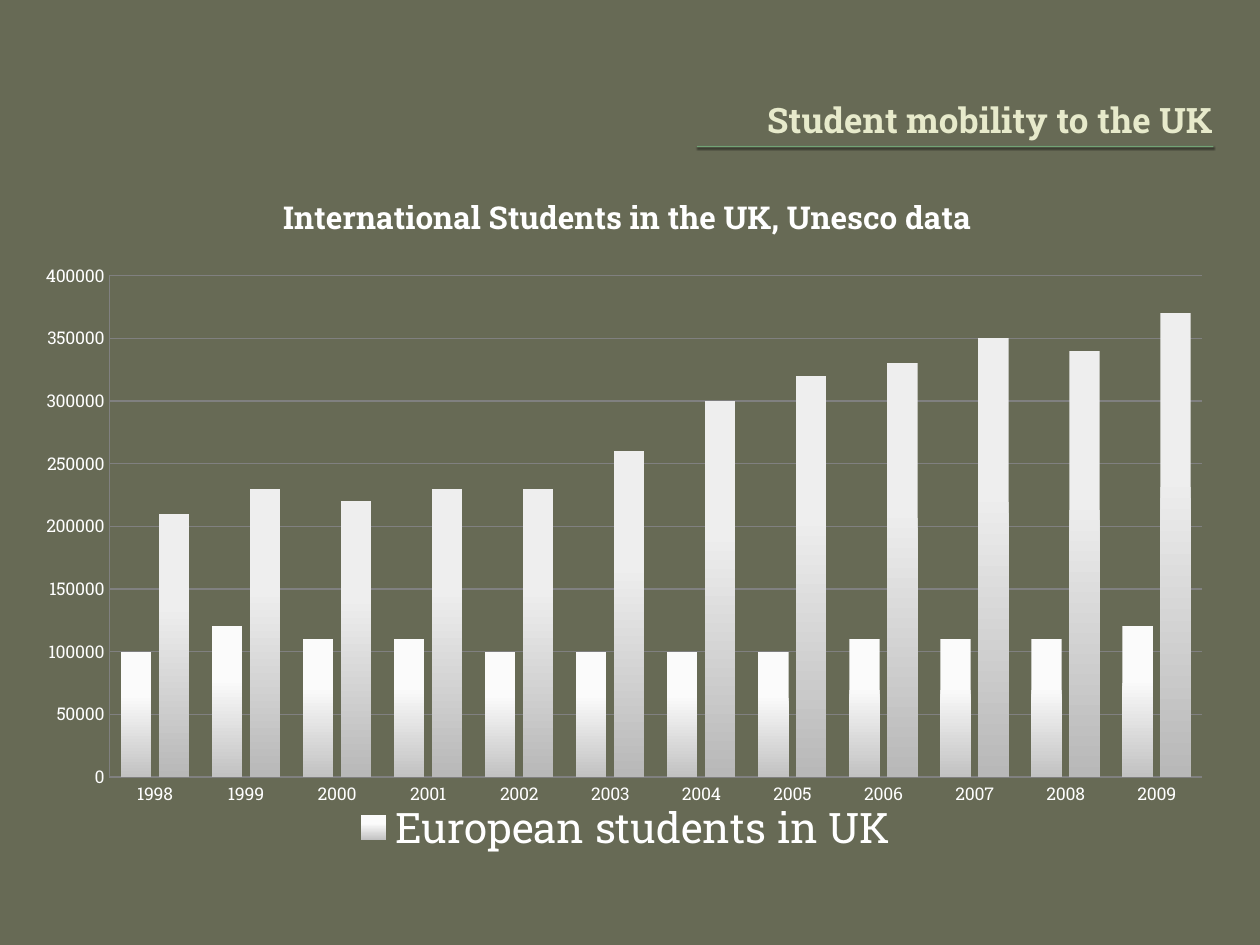
import lxml.etree
import pptx
import pptx.chart.data
import pptx.dml.color
import pptx.enum.chart
import pptx.enum.shapes
import pptx.enum.text
import pptx.oxml
import pptx.oxml.ns
import pptx.util
from dataclasses import dataclass

Cm = pptx.util.Cm
Pt = pptx.util.Pt
qn = pptx.oxml.ns.qn


@dataclass(frozen=True)
class Theme:
    font: str = "Roboto Slab"
    background: str = "676A55"
    heading: str = "E7EACB"
    rule: str = "72A376"
    text: str = "FFFFFF"
    grid: str = "808080"
    european: tuple = ("FBFBFB", "C2C2C2")
    international: tuple = ("EEEEEE", "B8B8B8")
    heading_size: int = 20
    chart_title_size: int = 18
    axis_size: int = 10
    legend_size: int = 24


theme = Theme()


def format_font(font, size, color, bold=False):
    values = {"name": theme.font, "size": Pt(size), "bold": bold}
    for name, value in values.items():
        setattr(font, name, value)
    font.color.rgb = pptx.dml.color.RGBColor.from_string(color)


def place_chart_part(element, index, box, inner=False):
    """Give a chart part a manual layout, in fractions of the chart."""
    for old_layout in element.findall(qn("c:layout")):
        element.remove(old_layout)
    layout = lxml.etree.Element(qn("c:layout"))
    manual = lxml.etree.SubElement(layout, qn("c:manualLayout"))
    settings = [("layoutTarget", "inner")] if inner else []
    settings += [("xMode", "edge"), ("yMode", "edge")]
    settings += zip("xywh", box)
    for name, value in settings:
        lxml.etree.SubElement(manual, qn("c:" + name)).set("val", str(value))
    element.insert(index, layout)


presentation = pptx.Presentation()
presentation.slide_width = Cm(25.4)
presentation.slide_height = Cm(19.05)
slide = presentation.slides.add_slide(presentation.slide_layouts[5])
slide.background.fill.solid()
slide.background.fill.fore_color.rgb = pptx.dml.color.RGBColor.from_string(theme.background)

# Rule under the heading
rule = slide.shapes.add_shape(
    pptx.enum.shapes.MSO_SHAPE.RECTANGLE, Cm(14.05), Cm(2.94), Cm(10.41), Cm(0.03))
rule.fill.solid()
rule.fill.fore_color.rgb = pptx.dml.color.RGBColor.from_string(theme.rule)
rule.line.fill.background()
rule.shadow.inherit = False
effects = rule.element.spPr.find(qn("a:effectLst"))
effects.append(pptx.oxml.parse_xml(
    f'<a:outerShdw {pptx.oxml.ns.nsdecls("a")} blurRad="12700" dist="12700" dir="5400000">'
    '<a:srgbClr val="000000"><a:alpha val="75000"/></a:srgbClr></a:outerShdw>'))

# Heading
title = slide.shapes.title
geometry = {"left": Cm(13.79), "top": Cm(0.85), "width": Cm(10.92), "height": Cm(2.11)}
for name, value in geometry.items():
    setattr(title, name, value)
title.text_frame.text = "Student mobility to the UK"
title.text_frame.vertical_anchor = pptx.enum.text.MSO_ANCHOR.BOTTOM
paragraph = title.text_frame.paragraphs[0]
paragraph.alignment = pptx.enum.text.PP_ALIGN.RIGHT
format_font(paragraph.runs[0].font, theme.heading_size, theme.heading, bold=True)

# Chart data, in ten thousands of students
european = [10, 12, 11, 11, 10, 10, 10, 10, 11, 11, 11, 12]
international = [21, 23, 22, 23, 23, 26, 30, 32, 33, 35, 34, 37]
chart_data = pptx.chart.data.CategoryChartData()
chart_data.categories = [str(year) for year in range(1998, 2010)]
for name, ten_thousands in (("European students in UK", european),
                            ("International Students in UK", international)):
    chart_data.add_series(name, [value * 10000 for value in ten_thousands])

chart = slide.shapes.add_chart(
    pptx.enum.chart.XL_CHART_TYPE.COLUMN_CLUSTERED,
    Cm(0.51), Cm(3.33), Cm(24.21), Cm(14.86), chart_data).chart
format_font(chart.font, theme.axis_size, theme.text)

chart.has_title = True
chart.chart_title.text_frame.text = "International Students in the UK, Unesco data"
chart_title_run = chart.chart_title.text_frame.paragraphs[0].runs[0]
format_font(chart_title_run.font, theme.chart_title_size, theme.text, bold=True)

plot = chart.plots[0]
for name, value in {"gap_width": 75, "overlap": -25, "vary_by_categories": False}.items():
    setattr(plot, name, value)
for series, colors in zip(plot.series, (theme.european, theme.international)):
    fill = series.format.fill
    fill.gradient()
    fill.gradient_angle = 270
    for stop, color, position in zip(fill.gradient_stops, colors, (0.35, 1)):
        stop.color.rgb = pptx.dml.color.RGBColor.from_string(color)
        stop.position = position

# Axes
value_axis = chart.value_axis
scale = {"minimum_scale": 0, "maximum_scale": 400000, "major_unit": 50000,
         "has_major_gridlines": True}
for name, value in scale.items():
    setattr(value_axis, name, value)
value_axis.tick_labels.number_format = "0"
value_axis.tick_labels.number_format_is_linked = False
for axis in (chart.category_axis, value_axis):
    axis.major_tick_mark = pptx.enum.chart.XL_TICK_MARK.NONE
    axis.minor_tick_mark = pptx.enum.chart.XL_TICK_MARK.NONE
    format_font(axis.tick_labels.font, theme.axis_size, theme.text)
for lines in (chart.category_axis, value_axis, value_axis.major_gridlines):
    lines.format.line.width = Pt(0.75)
    lines.format.line.color.rgb = pptx.dml.color.RGBColor.from_string(theme.grid)

# The legend names the European series only
chart.has_legend = True
legend = chart.legend
legend.position = pptx.enum.chart.XL_LEGEND_POSITION.BOTTOM
legend.include_in_layout = False
format_font(legend.font, theme.legend_size, theme.text)
legend_element = chart.element.find(".//" + qn("c:legend"))
hidden_entry = lxml.etree.Element(qn("c:legendEntry"))
for name, value in (("idx", "1"), ("delete", "1")):
    lxml.etree.SubElement(hidden_entry, qn("c:" + name)).set("val", value)
legend_element.insert(1, hidden_entry)

place_chart_part(legend_element, 2, (0.27, 0.86, 0.46, 0.07))
place_chart_part(chart.element.find(".//" + qn("c:title")), 1, (0.21, 0.03))
place_chart_part(chart.element.find(".//" + qn("c:plotArea")), 0,
                 (0.07, 0.15, 0.91, 0.68), inner=True)

presentation.save("out.pptx")
